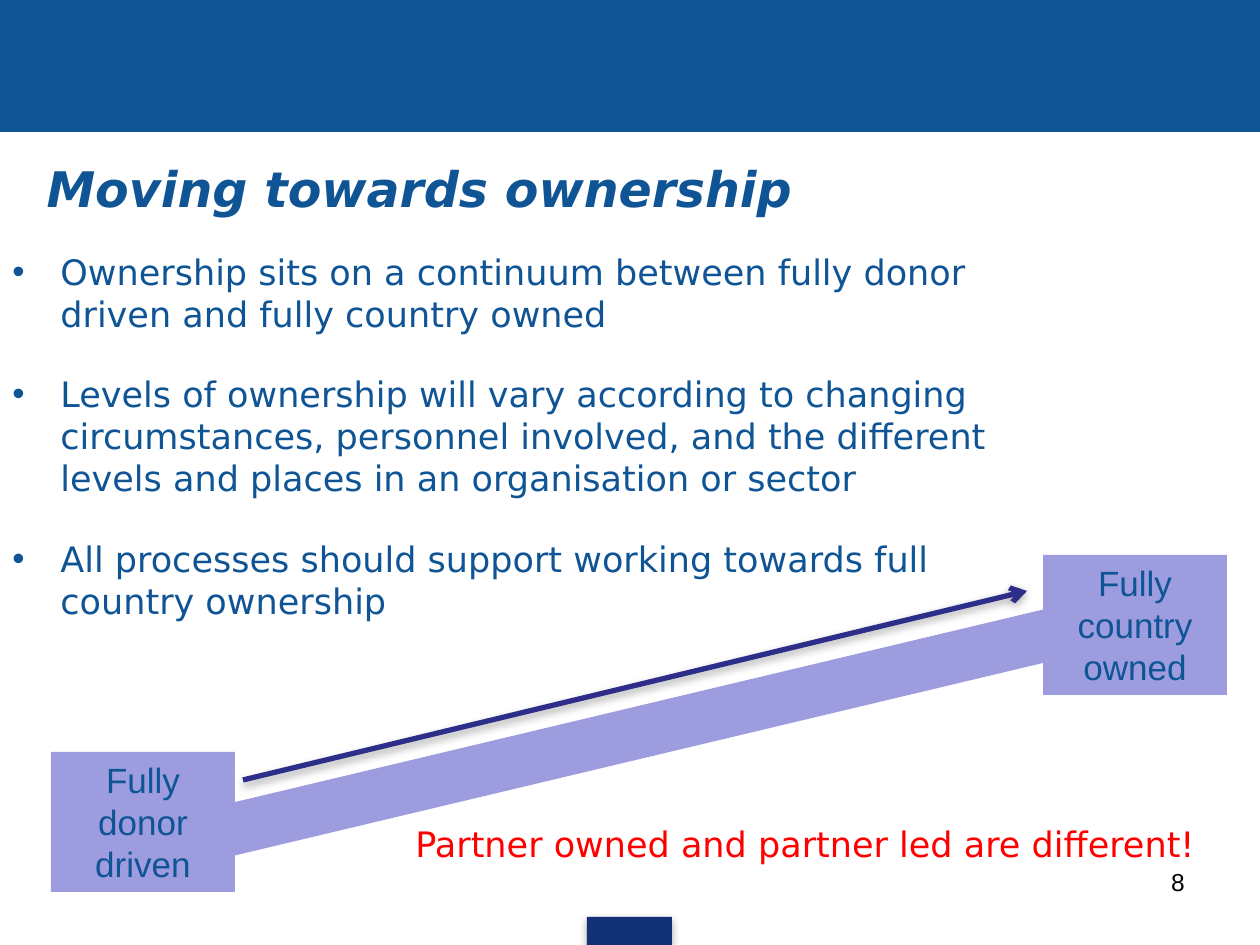
from lxml import etree
from pptx import Presentation
from pptx.dml.color import RGBColor
from pptx.enum.shapes import MSO_CONNECTOR as CONN, MSO_SHAPE as SHAPE
from pptx.enum.text import MSO_ANCHOR as ANCHOR, PP_ALIGN as ALIGN
from pptx.oxml import parse_xml
from pptx.oxml.ns import nsdecls, qn
from pptx.util import Pt

SCALE = 914400 / 126
BLUE, LILAC, NAVY, INDIGO = "0F5494", "9C9CDF", "133176", "2D2D8A"
SHADOW = (
    f'<a:effectLst {nsdecls("a")}><a:outerShdw blurRad="63500" dist="23000" dir="5400000" rotWithShape="0">'
    '<a:srgbClr val="000000"><a:alpha val="35000"/></a:srgbClr></a:outerShdw></a:effectLst>'
)
rgb = RGBColor.from_string


def px(*lengths):
    return [round(n * SCALE) for n in lengths]


def style(p, size, name, color, align=ALIGN.LEFT):
    p.alignment = align
    for r in p.runs:
        r.font.size = Pt(size)
        r.font.name = name
        r.font.color.rgb = rgb(color)


prs = Presentation()
prs.slide_width, prs.slide_height = px(1260, 945)
s = prs.slides.add_slide(prs.slide_layouts[5])

rects = [
    (0, 0, 1260, 132, BLUE, 0, ""),
    (587, 917, 85, 28, NAVY, 0, ""),
    (103, 708, 1060, 52, LILAC, -13.4, ""),
    (51, 752, 184, 140, LILAC, 0, "Fully donor driven"),
    (1043, 555, 184, 140, LILAC, 0, "Fully country owned"),
]
for x, y, w, h, color, angle, text in rects:
    sp = s.shapes.add_shape(SHAPE.RECTANGLE, *px(x, y, w, h))
    sp.rotation = angle
    sp.fill.solid()
    sp.fill.fore_color.rgb = rgb(color)
    sp.line.fill.background()
    sp.shadow.inherit = False
    if color == NAVY:
        spPr = sp._element.spPr
        spPr.replace(spPr.find(qn("a:effectLst")), parse_xml(SHADOW))
    if text:
        tf = sp.text_frame
        tf.word_wrap = True
        tf.vertical_anchor = ANCHOR.MIDDLE
        tf.text = text
        style(tf.paragraphs[0], 20, "Arial", BLUE, ALIGN.CENTER)

title = s.shapes.title
title.left, title.top, title.width, title.height = px(34, 135, 912, 106)
tf = title.text_frame
tf.text = "Moving towards ownership"
tf.vertical_anchor = ANCHOR.MIDDLE
p = tf.paragraphs[0]
style(p, 28, "DejaVu Sans", BLUE)
p.runs[0].font.bold = True
p.runs[0].font.italic = True

bullets = [
    "Ownership sits on a continuum between fully donor driven and fully country owned",
    "Levels of ownership will vary according to changing circumstances, personnel involved, "
    "and the different levels and places in an organisation or sector",
    "All processes should support working towards full country ownership",
]
tf = s.shapes.add_textbox(*px(0, 244, 1042, 386)).text_frame
tf.word_wrap = True
for i, text in enumerate(bullets):
    p = tf.add_paragraph() if i else tf.paragraphs[0]
    p.text = text
    p.space_before = Pt(22 if i else 0)
    pPr = p._p.get_or_add_pPr()
    indent = px(48)[0]
    pPr.set("marL", str(indent))
    pPr.set("indent", str(-indent))
    etree.SubElement(pPr, qn("a:buFont"), typeface="Arial")
    etree.SubElement(pPr, qn("a:buChar"), char="•")
    style(p, 20, "DejaVu Sans", BLUE)

arrow = s.shapes.add_connector(CONN.STRAIGHT, *px(243, 780, 1027, 591))
arrow.line.width = Pt(3)
arrow.line.color.rgb = rgb(INDIGO)
spPr = arrow._element.spPr
etree.SubElement(spPr.find(qn("a:ln")), qn("a:tailEnd"), type="arrow")
spPr.append(parse_xml(SHADOW))

notes = [
    (403, 816, 857, 55, "Partner owned and partner led are different!", 20, "DejaVu Sans", "FF0000", ALIGN.LEFT),
    (903, 861, 294, 66, "8", 14, "Arial", "000000", ALIGN.RIGHT),
]
for x, y, w, h, text, size, name, color, align in notes:
    tf = s.shapes.add_textbox(*px(x, y, w, h)).text_frame
    tf.word_wrap = True
    tf.text = text
    style(tf.paragraphs[0], size, name, color, align)

prs.save("out.pptx")
